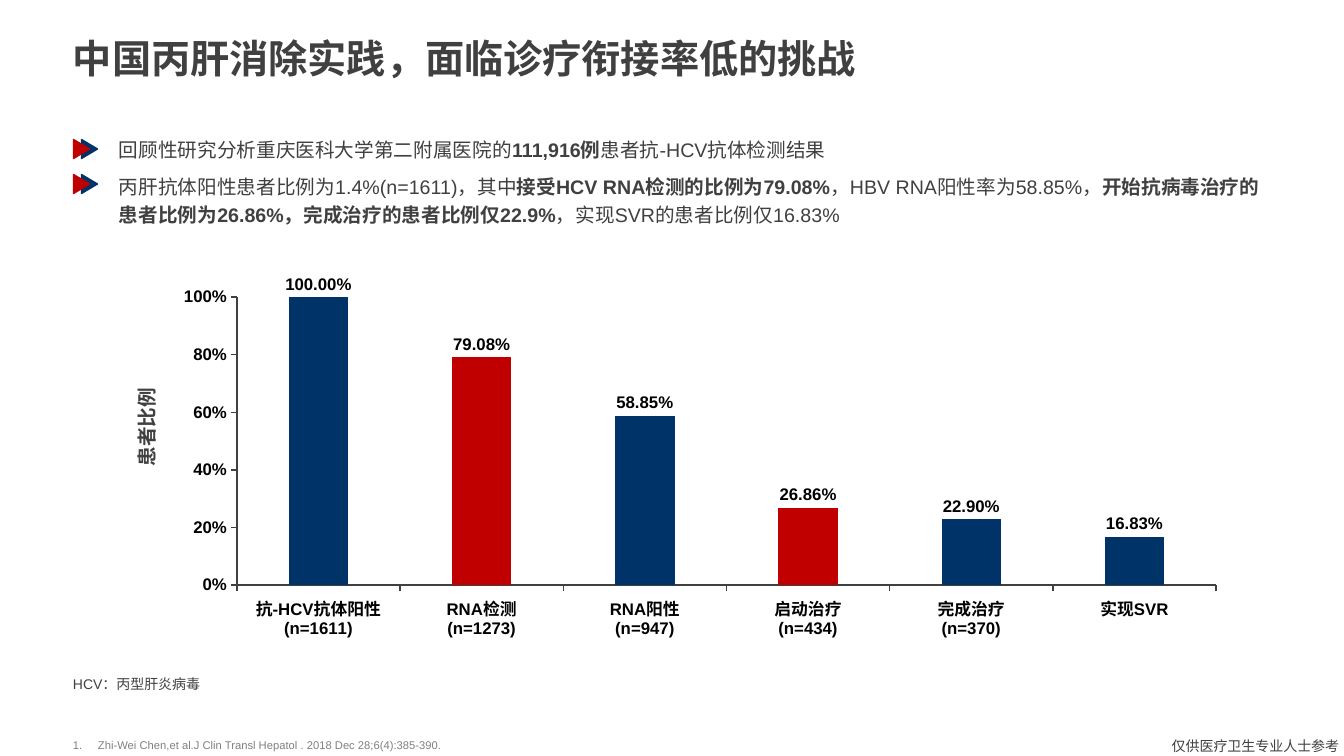
from lxml.etree import SubElement
from pptx import Presentation
from pptx.chart.data import CategoryChartData
from pptx.dml.color import RGBColor
from pptx.enum.chart import XL_CHART_TYPE as ChartType, XL_LABEL_POSITION as LabelPosition, XL_TICK_MARK as TickMark
from pptx.enum.shapes import MSO_SHAPE as Shape
from pptx.enum.text import MSO_ANCHOR as Anchor, PP_ALIGN as Align
from pptx.oxml import parse_xml
from pptx.oxml.ns import nsdecls, qn
from pptx.util import Emu, Pt

COLORS = {"navy": "003469", "red": "C00000", "text": "404040", "source": "808080", "black": "000000"}
LATIN, CHINESE = "Arial", "Noto Sans CJK SC"

TITLE = "中国丙肝消除实践，面临诊疗衔接率低的挑战"
# Each finding is a list of (text, bold) runs
FINDINGS = [
    [("回顾性研究分析重庆医科大学第二附属医院的", False),
     ("111,916例", True),
     ("患者抗-HCV抗体检测结果", False)],
    [("丙肝抗体阳性患者比例为1.4%(n=1611)，其中", False),
     ("接受HCV RNA检测的比例为79.08%", True),
     ("，HBV RNA阳性率为58.85%，", False),
     ("开始抗病毒治疗的患者比例为26.86%，完成治疗的患者比例仅22.9%", True),
     ("，实现SVR的患者比例仅16.83%", False)],
]
AXIS_TITLE = "患者比例"
CASCADE = [  # label, share of patients, bar colour
    ("抗-HCV抗体阳性\n(n=1611)", 1, "navy"),
    ("RNA检测\n(n=1273)", 0.7908, "red"),
    ("RNA阳性\n(n=947)", 0.5885, "navy"),
    ("启动治疗\n(n=434)", 0.2686, "red"),
    ("完成治疗\n(n=370)", 0.229, "navy"),
    ("实现SVR", 0.1683, "navy"),
]
ABBREVIATION = "HCV：丙型肝炎病毒"
REFERENCE = "Zhi-Wei Chen,et al.J Clin Transl Hepatol . 2018 Dec 28;6(4):385-390."
AUDIENCE = "仅供医疗卫生专业人士参考"

PLOT_AREA = {"x": 0.063, "y": 0.114, "w": 0.923, "h": 0.681}
MARKER_TOPS = (141, 176)
MARKER_LAYERS = ((80, "navy"), (72, "red"))


def px(value):
    return Emu(round(value * 914400 / 100.8))


def rgb(name):
    return RGBColor.from_string(COLORS[name])


def style_font(font, size, color, bold=False, name=LATIN):
    font.size, font.bold, font.name = Pt(size), bold, name
    font.color.rgb = rgb(color)


def add_text(slide, box, paragraphs, size, color="text", anchor=Anchor.MIDDLE,
             align=Align.LEFT, name=LATIN, line_spacing=None, space_after=None):
    """Add a text box without insets; paragraphs are lists of (text, bold) runs."""
    shape = slide.shapes.add_textbox(*map(px, box))
    frame = shape.text_frame
    frame.word_wrap, frame.vertical_anchor = True, anchor
    frame.margin_left = frame.margin_right = frame.margin_top = frame.margin_bottom = 0
    for index, runs in enumerate(paragraphs):
        paragraph = frame.add_paragraph() if index else frame.paragraphs[0]
        paragraph.alignment = align
        paragraph.line_spacing = line_spacing
        if space_after:
            paragraph.space_after = Pt(space_after)
        for text, bold in runs:
            run = paragraph.add_run()
            run.text = text
            style_font(run.font, size, color, bold, name)
            SubElement(run.font._element, qn("a:ea"), typeface=CHINESE)
    return shape


def add_marker(slide, top):
    for left, color in MARKER_LAYERS:
        triangle = slide.shapes.add_shape(Shape.ISOSCELES_TRIANGLE, px(left), px(top), px(19), px(16))
        triangle.rotation = 90
        triangle.shadow.inherit = False
        triangle.fill.solid()
        triangle.fill.fore_color.rgb = triangle.line.color.rgb = rgb(color)
        triangle.line.width = Pt(1)


def add_cascade_chart(slide, box):
    data = CategoryChartData(number_format="0.00%")
    data.categories = [label for label, _, _ in CASCADE]
    data.add_series(AXIS_TITLE, [share for _, share, _ in CASCADE])
    chart = slide.shapes.add_chart(ChartType.COLUMN_CLUSTERED, *map(px, box), data).chart
    chart.has_legend = chart.has_title = False
    style_font(chart.font, 12, "black", True)

    for axis in (chart.category_axis, chart.value_axis):
        axis.has_major_gridlines = False
        axis.major_tick_mark, axis.minor_tick_mark = TickMark.OUTSIDE, TickMark.NONE
        axis.format.line.color.rgb = rgb("text")
        axis.format.line.width = Pt(1)
        style_font(axis.tick_labels.font, 12, "black", True)
    value_axis = chart.value_axis
    value_axis.minimum_scale, value_axis.maximum_scale, value_axis.major_unit = 0, 1, 0.2
    value_axis.tick_labels.number_format = "0%"
    value_axis.tick_labels.number_format_is_linked = False

    plot = chart.plots[0]
    plot.gap_width, plot.overlap, plot.vary_by_categories = 175, 12, False
    series = plot.series[0]
    series.format.fill.solid()
    series.format.fill.fore_color.rgb = rgb("navy")
    for index, (_, _, color) in enumerate(CASCADE):
        fill = series.points[index].format.fill
        fill.solid()
        fill.fore_color.rgb = rgb(color)
    labels = series.data_labels
    labels.show_value, labels.position = True, LabelPosition.OUTSIDE_END
    labels.number_format, labels.number_format_is_linked = "0.00%", False
    style_font(labels.font, 12, "black", True)

    plot_area = chart._chartSpace.find(".//" + qn("c:plotArea"))
    for layout in plot_area.findall(qn("c:layout")):
        plot_area.remove(layout)
    modes = '<c:layoutTarget val="inner"/><c:xMode val="edge"/><c:yMode val="edge"/>'
    sizes = "".join(f'<c:{key} val="{value}"/>' for key, value in PLOT_AREA.items())
    plot_area.insert(0, parse_xml(
        f'<c:layout {nsdecls("c")}><c:manualLayout>{modes}{sizes}</c:manualLayout></c:layout>'))


def number_paragraph(paragraph, indent):
    properties = paragraph._p.get_or_add_pPr()
    properties.set("marL", str(indent))
    properties.set("indent", str(-indent))
    SubElement(properties, qn("a:buFont"), typeface=LATIN)
    SubElement(properties, qn("a:buAutoNum"), type="arabicPeriod")


def main():
    presentation = Presentation()
    presentation.slide_width, presentation.slide_height = px(1344), px(756)
    slide = presentation.slides.add_slide(presentation.slide_layouts[6])

    add_text(slide, (1132, 732, 207, 27), [[(AUDIENCE, False)]], 10, align=Align.RIGHT, name=CHINESE)
    reference = add_text(slide, (73, 694, 1086, 58), [[(REFERENCE, False)]], 8, "source", Anchor.BOTTOM)
    number_paragraph(reference.text_frame.paragraphs[0], px(25))
    add_text(slide, (73, 0, 1199, 116), [[(TITLE, True)]], 28)
    add_cascade_chart(slide, (170, 249, 1061, 423))
    axis_title = add_text(slide, (33, 410, 228, 34), [[(AXIS_TITLE, True)]], 14, align=Align.CENTER)
    axis_title.rotation = 270
    add_text(slide, (119, 132, 1153, 96), FINDINGS, 14, line_spacing=1.2, space_after=6)
    add_text(slide, (73, 672, 1236, 21), [[(ABBREVIATION, False)]], 10, line_spacing=1.2)
    for top in MARKER_TOPS:
        add_marker(slide, top)
    presentation.save("out.pptx")


if __name__ == "__main__":
    main()
